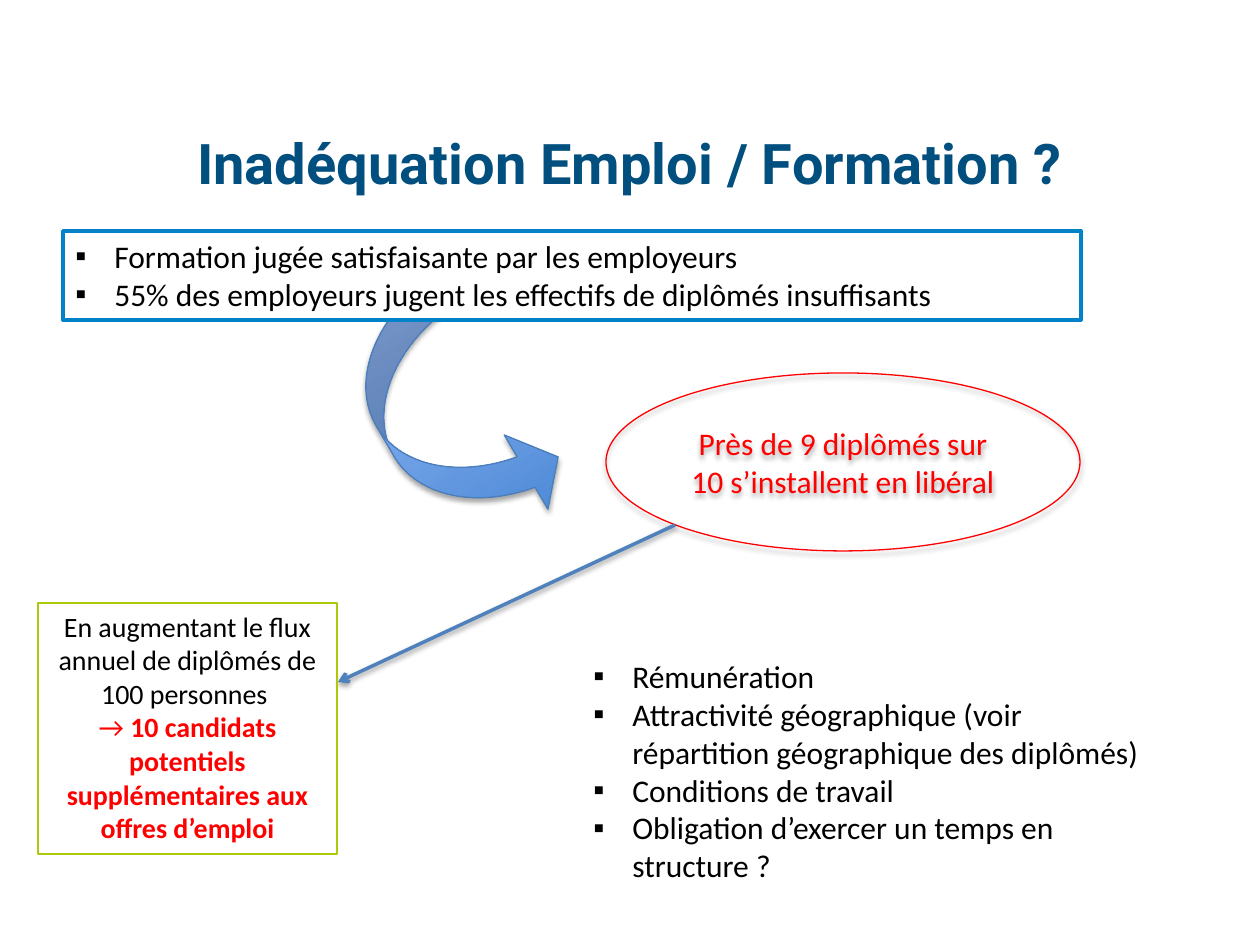
"""Build the slide on the mismatch between jobs and training."""
from dataclasses import dataclass

from lxml.etree import SubElement
from pptx import Presentation
from pptx.dml.color import RGBColor
from pptx.enum.shapes import MSO_CONNECTOR, MSO_SHAPE
from pptx.enum.text import MSO_ANCHOR, PP_ALIGN
from pptx.oxml.ns import qn
from pptx.util import Emu, Pt


@dataclass(frozen=True)
class Theme:
    """Colours, fonts and type sizes of the slide."""
    title: str = "004F7E"
    text: str = "000000"
    alert: str = "FF0000"
    paper: str = "FFFFFF"
    frame: str = "0081C8"
    green: str = "AEC90A"
    link: str = "4F81BD"
    arrow_line: str = "4B7EBC"
    arrow_fill: tuple = ("3F80CE", "A4C4FF")
    title_font: str = "Roboto"
    body_font: str = "Calibri"
    title_size: int = 32
    body_size: int = 18
    note_size: int = 16


THEME = Theme()


def px(*values):
    """Convert pixels at 126 to the inch into EMU."""
    return [Emu(round(v * 914400 / 126)) for v in values]


def rgb(value):
    """Return a colour from its hex code."""
    return RGBColor.from_string(value)


def style_run(r, size, color, font=THEME.body_font, bold=False):
    """Format one run."""
    r.font.name, r.font.size, r.font.bold = font, Pt(size), bold
    r.font.color.rgb = rgb(color)


def set_line(sp, color, width):
    """Draw the outline of a shape or connector."""
    sp.line.color.rgb = rgb(color)
    sp.line.width = Pt(width)


def set_shadow(sp, alpha=None, dist=1.8):
    """Replace the inherited shadow with a soft downward one, or none."""
    spPr = sp._element.spPr
    effects = spPr.find(qn("a:effectLst"))
    if effects is None:
        effects = SubElement(spPr, qn("a:effectLst"))
    if alpha is None:
        return
    shadow = SubElement(effects, qn("a:outerShdw"), blurRad=str(Pt(3.1)),
                        dist=str(Pt(dist)), dir="5400000", rotWithShape="0")
    color = SubElement(shadow, qn("a:srgbClr"), val="000000")
    SubElement(color, qn("a:alpha"), val=str(alpha * 1000))


def add_title(s, text, box):
    """Place and format the title placeholder."""
    sp = s.shapes.title
    sp.left, sp.top, sp.width, sp.height = px(*box)
    tf = sp.text_frame
    tf.text = text
    tf.vertical_anchor = MSO_ANCHOR.MIDDLE
    p = tf.paragraphs[0]
    p.alignment = PP_ALIGN.CENTER
    style_run(p.runs[0], THEME.title_size, THEME.title, THEME.title_font, True)


def add_panel(s, kind, box, line, width, fill=None, shadow=None):
    """Add an outlined shape and return it."""
    sp = s.shapes.add_shape(kind, *px(*box))
    if fill:
        sp.fill.solid()
        sp.fill.fore_color.rgb = rgb(fill)
    else:
        sp.fill.background()
    set_line(sp, line, width)
    set_shadow(sp, shadow)
    return sp


def add_curved_arrow(s, box):
    """Add the tilted curved arrow with its gradient."""
    sp = add_panel(s, MSO_SHAPE.CURVED_RIGHT_ARROW, box, THEME.arrow_line, 0.75, shadow=35)
    sp.rotation = 329.5
    sp.adjustments[1] = 0.61
    sp.fill.gradient()
    sp.fill.gradient_angle = 90
    for stop, color in zip(sp.fill.gradient_stops, THEME.arrow_fill):
        stop.color.rgb = rgb(color)


def write_bullets(sp, items):
    """Write a list with square bullets."""
    tf = sp.text_frame
    tf.word_wrap = True
    tf.vertical_anchor = MSO_ANCHOR.TOP
    tf.text = "\n".join(items)
    indent = px(39)[0]
    for p in tf.paragraphs:
        p.alignment = PP_ALIGN.LEFT
        pPr = p._p.get_or_add_pPr()
        pPr.set("marL", str(indent))
        pPr.set("indent", str(-indent))
        SubElement(pPr, qn("a:buFont"), typeface="Arial")
        SubElement(pPr, qn("a:buChar"), char="▪")
        style_run(p.runs[0], THEME.body_size, THEME.text)


def write_centred(sp, paragraphs, size, anchor):
    """Write centred paragraphs of (text, colour, bold) runs."""
    tf = sp.text_frame
    tf.word_wrap = True
    tf.vertical_anchor = anchor
    for i, runs in enumerate(paragraphs):
        p = tf.add_paragraph() if i else tf.paragraphs[0]
        p.alignment = PP_ALIGN.CENTER
        for text, color, bold in runs:
            r = p.add_run()
            r.text = text
            style_run(r, size, color, bold=bold)


def add_arrow(s, start, end):
    """Add a straight arrow between two points."""
    sp = s.shapes.add_connector(MSO_CONNECTOR.STRAIGHT, *px(*start, *end))
    set_line(sp, THEME.link, 2)
    SubElement(sp.line._get_or_add_ln(), qn("a:tailEnd"), type="arrow")
    set_shadow(sp, 38, 1.6)


def main():
    """Build and save the slide."""
    prs = Presentation()
    prs.slide_width, prs.slide_height = px(1260, 945)
    s = prs.slides.add_slide(prs.slide_layouts[5])

    add_title(s, "Inadéquation Emploi / Formation ?", (63, 117, 1134, 91))
    add_curved_arrow(s, (382, 285, 141, 263))

    findings = add_panel(s, MSO_SHAPE.RECTANGLE, (63, 231, 1018, 89),
                         THEME.frame, 2, fill=THEME.paper)
    write_bullets(findings, [
        "Formation jugée satisfaisante par les employeurs",
        "55% des employeurs jugent les effectifs de diplômés insuffisants",
    ])

    practice = add_panel(s, MSO_SHAPE.OVAL, (606, 373, 474, 178),
                         THEME.alert, 0.75, shadow=35)
    write_centred(practice, [
        [("Près de 9 diplômés sur 10 s’installent en libéral", THEME.alert, False)],
    ], THEME.body_size, MSO_ANCHOR.MIDDLE)

    add_arrow(s, (675, 525), (338, 682))

    effect = add_panel(s, MSO_SHAPE.RECTANGLE, (38, 603, 299, 251), THEME.green, 0.75)
    write_centred(effect, [
        [("En augmentant le flux annuel de diplômés de 100 personnes ", THEME.text, False)],
        [("→ ", THEME.alert, False),
         ("10 candidats potentiels supplémentaires aux offres d’emploi", THEME.alert, True)],
    ], THEME.note_size, MSO_ANCHOR.TOP)

    causes = s.shapes.add_textbox(*px(581, 651, 593, 242))
    write_bullets(causes, [
        "Rémunération",
        "Attractivité géographique (voir répartition géographique des diplômés)",
        "Conditions de travail",
        "Obligation d’exercer un temps en structure ?",
    ])
    prs.save("out.pptx")


if __name__ == "__main__":
    main()
